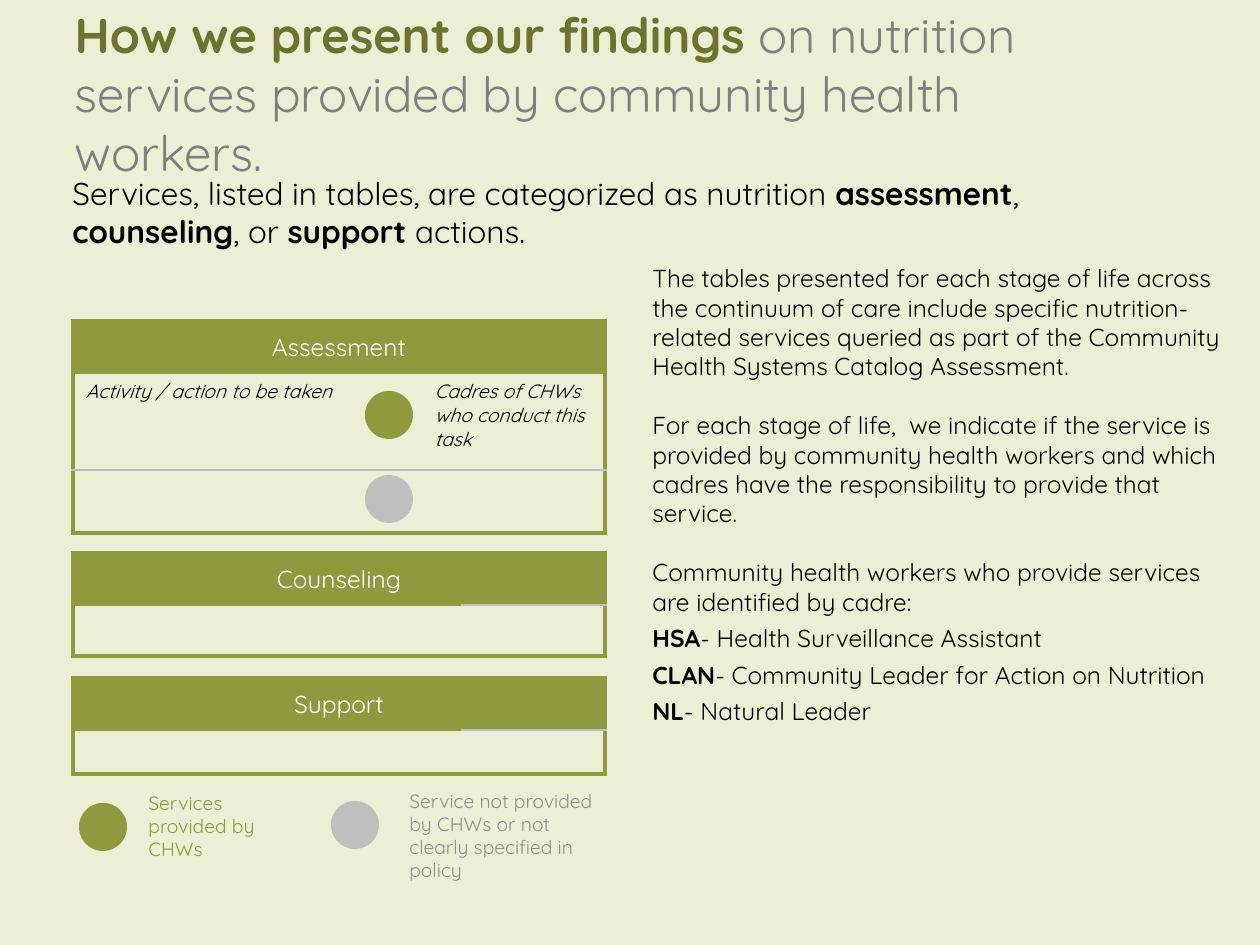
from lxml.etree import SubElement
from pptx import Presentation
from pptx.dml.color import RGBColor
from pptx.enum.shapes import MSO_SHAPE
from pptx.enum.text import MSO_ANCHOR, MSO_AUTO_SIZE, PP_ALIGN
from pptx.oxml.ns import qn
from pptx.util import Pt

PX = 914400 // 126  # EMU in one px


class Theme:
    font = "Quicksand"
    background, olive, dark_olive = "ECEED5", "91993E", "6D732F"
    silver, gray, legend_gray = "BFBFBF", "7F7F7F", "8F8F8F"
    black, white = "000000", "FFFFFF"
    title, lead, body, small = 28, 18, 14, 11
    thick, thin = 3, 1


# Content: a paragraph is a list of (text, run format) pairs
BOLD = {"bold": True}
TITLE = [("How we present our findings ", {"bold": True, "color": Theme.dark_olive}),
         ("on nutrition services provided by community health workers.", {})]
LEAD = [("Services, listed in tables, are categorized as nutrition ", {}),
        ("assessment", BOLD), (", ", {}), ("counseling", BOLD), (", or ", {}),
        ("support ", BOLD), ("actions.", {})]
EXPLANATION = [
    "The tables presented for each stage of life across the continuum of care include "
    "specific nutrition-related services queried as part of the Community Health Systems "
    "Catalog Assessment.",
    "For each stage of life,  we indicate if the service is provided by community health "
    "workers and which cadres have the responsibility to provide that service.",
    "Community health workers who provide services are identified by cadre:",
]
CADRES = [("HSA", "Health Surveillance Assistant"),
          ("CLAN", "Community Leader for Action on Nutrition"),
          ("NL", "Natural Leader")]

TABLE_LEFT = 73
# heading, top, column widths, row heights, line under heading by column, body rows
TABLES = [
    ("Assessment", 321, (286, 63, 183), (52, 97, 63), (Theme.olive,) * 3,
     [("Activity / action to be taken", "", "Cadres of CHWs who conduct this task"),
      ("", "", "")]),
    ("Counseling", 553, (388, 144), (52, 51), (Theme.olive, Theme.silver), [("", "")]),
    ("Support", 678, (388, 144), (52, 44), (Theme.olive, Theme.silver), [("", "")]),
]

DOT = 48
DOTS = [(365, 391, Theme.olive), (365, 475, Theme.silver),
        (79, 803, Theme.olive), (331, 801, Theme.silver)]
LEGEND = [("Services provided by CHWs", (136, 785, 170, 83), Theme.olive),
          ("Service not provided by CHWs or not clearly specified in policy",
           (397, 783, 220, 83), Theme.legend_gray)]


def rgb(value):
    return RGBColor.from_string(value)


def write(paragraph, content, size, color=Theme.black, align=PP_ALIGN.LEFT,
          italic=False, before=0, after=0):
    """Fill a paragraph with a string or with (text, run format) pairs."""
    paragraph.alignment = align
    paragraph.space_before, paragraph.space_after = Pt(before), Pt(after)
    for text, style in [(content, {})] if isinstance(content, str) else content:
        run = paragraph.add_run()
        run.text = text
        font = run.font
        font.name, font.size, font.italic = Theme.font, Pt(size), italic
        font.bold = style.get("bold", False)
        font.color.rgb = rgb(style.get("color", color))


def add_text(slide, box, paragraphs, size, color=Theme.black):
    """Add a text box; paragraphs are (content, paragraph format) pairs."""
    frame = slide.shapes.add_textbox(*(value * PX for value in box)).text_frame
    frame.word_wrap = True
    for index, (content, style) in enumerate(paragraphs):
        paragraph = frame.add_paragraph() if index else frame.paragraphs[0]
        write(paragraph, content, size, color, **style)


def set_borders(cell, **edges):
    """Draw the given (color, width) edges and clear the others."""
    properties = cell._tc.get_or_add_tcPr()
    for edge in ("L", "R", "T", "B"):
        color, width = edges.get(edge) or (None, 0)
        line = SubElement(properties, qn(f"a:ln{edge}"), w=str(Pt(width)))
        if color:
            fill = SubElement(line, qn("a:solidFill"))
            SubElement(fill, qn("a:srgbClr"), val=color)
        else:
            SubElement(line, qn("a:noFill"))


def add_service_table(slide, heading, top, widths, heights, rules, body):
    table = slide.shapes.add_table(len(heights), len(widths), TABLE_LEFT * PX, top * PX,
                                   sum(widths) * PX, sum(heights) * PX).table
    table.first_row = table.horz_banding = False
    for column, width in zip(table.columns, widths):
        column.width = width * PX
    for row, height in zip(table.rows, heights):
        row.height = height * PX
    outer = (Theme.olive, Theme.thick)

    # Heading across all columns
    header = table.cell(0, 0)
    header.merge(table.cell(0, len(widths) - 1))
    header.vertical_anchor = MSO_ANCHOR.MIDDLE
    set_borders(header, L=outer, R=outer, T=outer, B=(Theme.olive, Theme.thin))
    header.fill.solid()
    header.fill.fore_color.rgb = rgb(Theme.olive)
    write(header.text_frame.paragraphs[0], heading, Theme.body, Theme.white, PP_ALIGN.CENTER)

    # Body rows
    for r, texts in enumerate(body, start=1):
        for c, text in enumerate(texts):
            cell = table.cell(r, c)
            set_borders(cell,
                        L=outer if c == 0 else None,
                        R=outer if c == len(widths) - 1 else None,
                        T=(rules[c] if r == 1 else Theme.silver, Theme.thin),
                        B=outer if r == len(body) else (Theme.silver, Theme.thin))
            cell.fill.background()
            if text:
                write(cell.text_frame.paragraphs[0], text, Theme.small, italic=True)
            else:
                cell.margin_top = cell.margin_bottom = 0


def main():
    presentation = Presentation()
    presentation.slide_width, presentation.slide_height = 1260 * PX, 945 * PX
    slide = presentation.slides.add_slide(presentation.slide_layouts[5])
    slide.background.fill.solid()
    slide.background.fill.fore_color.rgb = rgb(Theme.background)

    # Title and lead
    title = slide.shapes.title
    title.left, title.top, title.width, title.height = (v * PX for v in (62, 50, 1104, 86))
    title.text_frame.auto_size = MSO_AUTO_SIZE.NONE
    title.text_frame.vertical_anchor = MSO_ANCHOR.MIDDLE
    write(title.text_frame.paragraphs[0], TITLE, Theme.title, Theme.gray)
    add_text(slide, (60, 168, 978, 89), [(LEAD, {})], Theme.lead)

    # Explanation and list of cadres
    paragraphs = [(text, {"before": 16.8 if index else 0})
                  for index, text in enumerate(EXPLANATION)]
    paragraphs[-1][1]["after"] = 4
    paragraphs += [([(short, BOLD), (f"- {name}", {})], {"after": 4})
                   for short, name in CADRES]
    add_text(slide, (640, 257, 599, 479), paragraphs, Theme.body)

    # Service tables
    for table in TABLES:
        add_service_table(slide, *table)

    # Status dots and legend
    for left, top, color in DOTS:
        dot = slide.shapes.add_shape(MSO_SHAPE.OVAL, left * PX, top * PX, DOT * PX, DOT * PX)
        dot.shadow.inherit = False
        dot.fill.solid()
        dot.fill.fore_color.rgb = rgb(color)
        dot.line.fill.background()
    for text, box, color in LEGEND:
        add_text(slide, box, [(text, {})], Theme.small, color)

    presentation.save("out.pptx")


if __name__ == "__main__":
    main()
